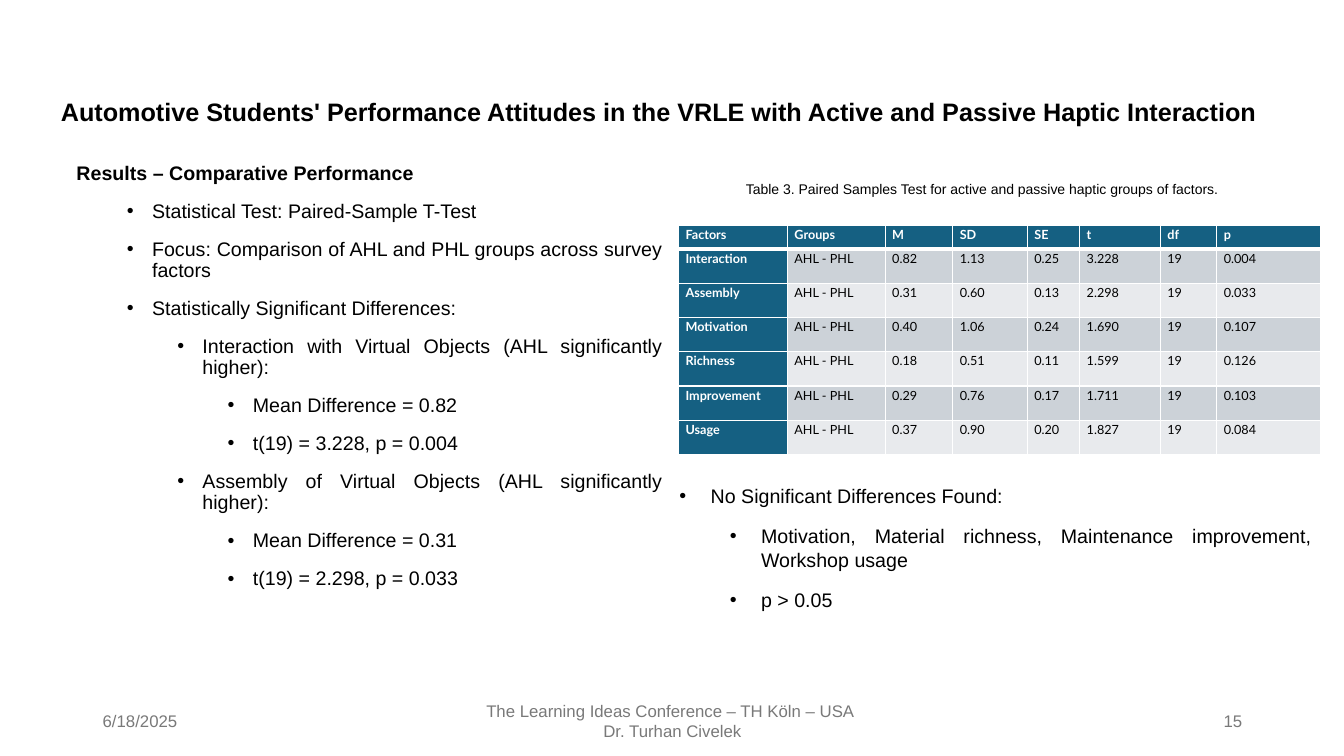
from lxml import etree
from pptx import Presentation
from pptx.dml.color import RGBColor
from pptx.enum.text import MSO_ANCHOR, PP_ALIGN
from pptx.oxml.ns import qn
from pptx.util import Inches, Pt

LEFT, CENTER, RIGHT, JUSTIFY = PP_ALIGN.LEFT, PP_ALIGN.CENTER, PP_ALIGN.RIGHT, PP_ALIGN.JUSTIFY
TOP, MIDDLE = MSO_ANCHOR.TOP, MSO_ANCHOR.MIDDLE

BLACK = RGBColor(0x00, 0x00, 0x00)
WHITE = RGBColor(0xFF, 0xFF, 0xFF)
GRAY = RGBColor(0x79, 0x79, 0x79)
TEAL = RGBColor(0x15, 0x60, 0x82)
BAND_DARK = RGBColor(0xCC, 0xD2, 0xD8)
BAND_LIGHT = RGBColor(0xE8, 0xEA, 0xED)

RESULTS = [
    (0, "Results – Comparative Performance"),
    (1, "Statistical Test: Paired-Sample T-Test"),
    (1, "Focus: Comparison of AHL and PHL groups across survey factors"),
    (1, "Statistically Significant Differences:"),
    (2, "Interaction with Virtual Objects (AHL significantly higher):"),
    (3, "Mean Difference = 0.82"),
    (3, "t(19) = 3.228, p = 0.004"),
    (2, "Assembly of Virtual Objects (AHL significantly higher):"),
    (3, "Mean Difference = 0.31"),
    (3, "t(19) = 2.298, p = 0.033"),
]
NO_DIFFERENCES = [
    (1, "No Significant Differences Found:"),
    (2, "Motivation, Material richness, Maintenance improvement, Workshop usage"),
    (2, "p > 0.05"),
]
COL_WIDTHS = [1.08, 0.97, 0.67, 0.74, 0.52, 0.8, 0.56, 1.03]
HEADER_HEIGHT, ROW_HEIGHT = 0.23, 0.34
HEADER = ["Factors", "Groups", "M", "SD", "SE", "t", "df", "p"]
FACTORS = [
    ("Interaction", "0.82", "1.13", "0.25", "3.228", "0.004"),
    ("Assembly", "0.31", "0.60", "0.13", "2.298", "0.033"),
    ("Motivation", "0.40", "1.06", "0.24", "1.690", "0.107"),
    ("Richness", "0.18", "0.51", "0.11", "1.599", "0.126"),
    ("Improvement", "0.29", "0.76", "0.17", "1.711", "0.103"),
    ("Usage", "0.37", "0.90", "0.20", "1.827", "0.084"),
]


def add_run(p, text, size, color, bold=False, font="Arial"):
    r = p.add_run()
    r.text = text
    r.font.size = Pt(size)
    r.font.name = font
    r.font.bold = bold
    r.font.color.rgb = color


def add_box(s, left, top, width, height, anchor=TOP):
    sp = s.shapes.add_textbox(Inches(left), Inches(top), Inches(width), Inches(height))
    tf = sp.text_frame
    tf.word_wrap = True
    tf.vertical_anchor = anchor
    return tf


def add_paragraph(tf, index):
    return tf.add_paragraph() if index else tf.paragraphs[0]


def add_text(s, box, lines, size, color, align=LEFT, anchor=MIDDLE, bold=False, spacing=1.0):
    tf = add_box(s, *box, anchor=anchor)
    for i, line in enumerate(lines):
        p = add_paragraph(tf, i)
        p.alignment = align
        p.line_spacing = spacing
        add_run(p, line, size, color, bold)


def set_bullet(p, margin, hanging):
    pPr = p._p.get_or_add_pPr()
    pPr.set("marL", str(Inches(margin)))
    pPr.set("indent", str(-Inches(hanging)))
    etree.SubElement(pPr, qn("a:buFont")).set("typeface", "Arial")
    etree.SubElement(pPr, qn("a:buChar")).set("char", "•")


def add_outline(s, box, items, spacing, hanging):
    tf = add_box(s, *box)
    for i, (level, text) in enumerate(items):
        p = add_paragraph(tf, i)
        p.alignment = JUSTIFY
        p.level = level
        p.line_spacing = spacing
        p.space_before = p.space_after = Pt(6)
        if level:
            set_bullet(p, 0.5 * level + hanging, hanging)
        add_run(p, text, 14, BLACK, bold=level == 0)


def set_borders(cell, top, bottom):
    tcPr = cell._tc.get_or_add_tcPr()
    for side, width in (("L", 1), ("R", 1), ("T", top), ("B", bottom)):
        ln = etree.SubElement(tcPr, qn(f"a:ln{side}"), w=str(Pt(width)))
        fill = etree.SubElement(ln, qn("a:solidFill"))
        etree.SubElement(fill, qn("a:srgbClr"), val=str(WHITE))


def fill_cell(cell, text, row, col):
    heading = row == 0 or col == 0
    set_borders(cell, 3 if row == 1 else 1, 3 if row == 0 else 1)
    cell.fill.solid()
    cell.fill.fore_color.rgb = TEAL if heading else (BAND_DARK if row % 2 else BAND_LIGHT)
    cell.margin_left = cell.margin_right = Inches(0.07)
    cell.margin_top = cell.margin_bottom = 0
    p = cell.text_frame.paragraphs[0]
    p.alignment = JUSTIFY
    p.line_spacing = Pt(12)
    add_run(p, text, 9, WHITE if heading else BLACK, heading, "Lato")


def add_factor_table(s, left, top):
    rows = [HEADER] + [[name, "AHL - PHL", m, sd, se, t, "19", p]
                       for name, m, sd, se, t, p in FACTORS]
    heights = [HEADER_HEIGHT] + [ROW_HEIGHT] * len(FACTORS)
    table = s.shapes.add_table(len(rows), len(HEADER), Inches(left), Inches(top),
                               Inches(sum(COL_WIDTHS)), Inches(sum(heights))).table
    for column, width in zip(table.columns, COL_WIDTHS):
        column.width = Inches(width)
    for i, (values, height) in enumerate(zip(rows, heights)):
        table.rows[i].height = Inches(height)
        for j, value in enumerate(values):
            fill_cell(table.cell(i, j), value, i, j)


def main():
    prs = Presentation()
    prs.slide_width, prs.slide_height = Inches(13.33), Inches(7.5)
    s = prs.slides.add_slide(prs.slide_layouts[6])

    add_text(s, (0.47, 0.4, 12.2, 1.45),
             ["Automotive Students' Performance Attitudes in the VRLE with "
              "Active and Passive Haptic Interaction "],
             18, BLACK, CENTER, bold=True, spacing=0.9)
    add_outline(s, (0.66, 1.57, 6.01, 4.88), RESULTS, 0.9, 0.25)

    add_text(s, (0.92, 6.95, 3, 0.4), ["6/18/2025"], 12, GRAY)
    add_text(s, (4.42, 6.95, 4.5, 0.4),
             ["The Learning Ideas Conference – TH Köln – USA ", "Dr. Turhan Civelek"],
             12, GRAY, CENTER)
    add_text(s, (9.42, 6.95, 3, 0.4), ["15"], 12, GRAY, RIGHT)

    add_text(s, (7.3, 1.74, 4.96, 0.27),
             ["Table 3. Paired Samples Test for active and passive haptic groups of factors."],
             10, BLACK, anchor=TOP)
    add_factor_table(s, 6.73, 2.24)
    add_outline(s, (6.14, 4.75, 6.97, 1.38), NO_DIFFERENCES, 1.0, 0.31)

    prs.save("out.pptx")


if __name__ == "__main__":
    main()
